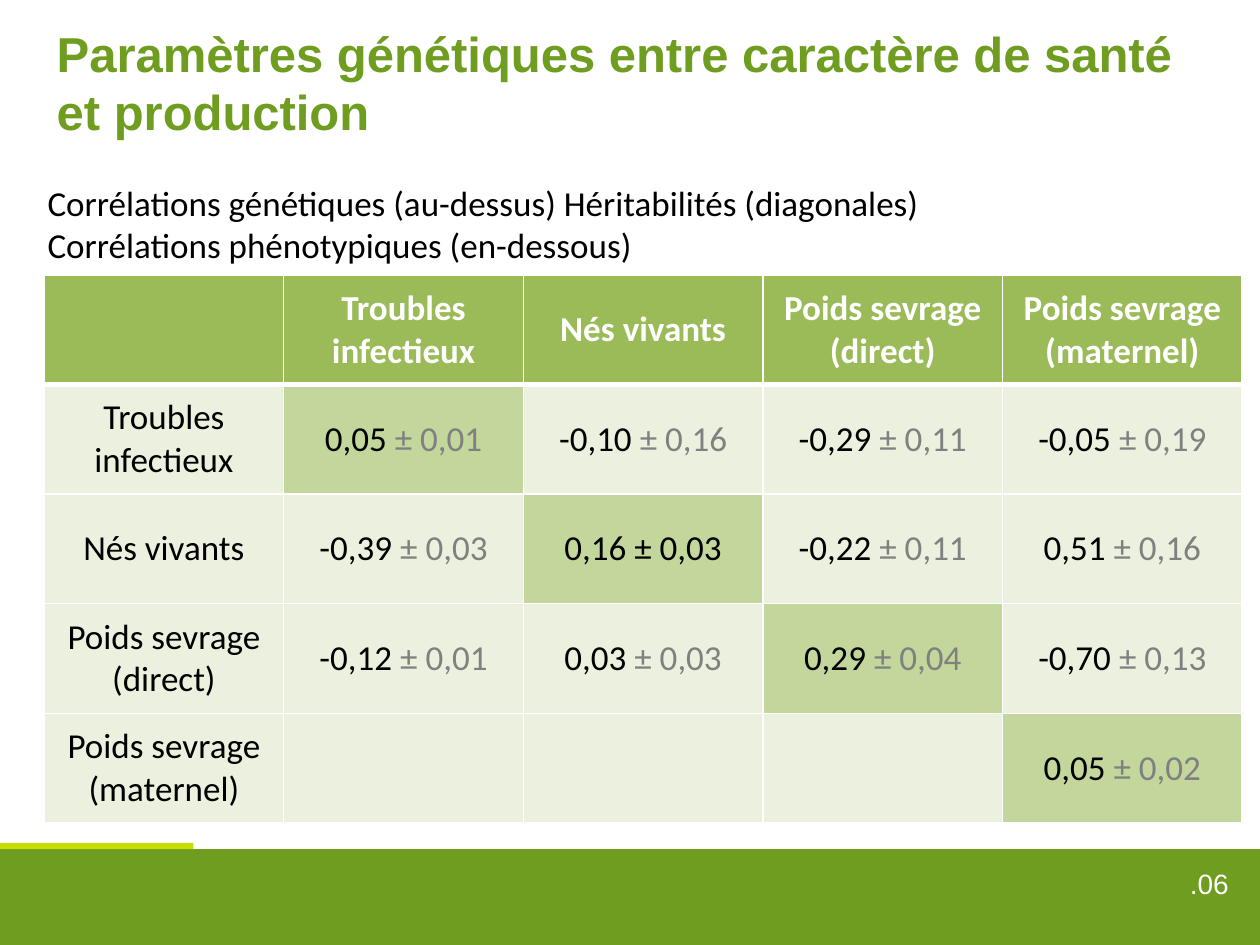
from lxml import etree
from pptx import Presentation
from pptx.dml.color import RGBColor
from pptx.enum import shapes, text
from pptx.oxml import ns
from pptx.util import Cm, Pt

TITLE = "Paramètres génétiques entre caractère de santé et production"
CAPTION = [
    "Corrélations génétiques (au-dessus) Héritabilités (diagonales)",
    "Corrélations phénotypiques (en-dessous)",
]
PAGE_NUMBER = ".06"
TRAITS = [
    "Troubles infectieux",
    "Nés vivants",
    "Poids sevrage (direct)",
    "Poids sevrage (maternel)",
]
# (estimate, standard error); heritabilities lie on the diagonal
ESTIMATES = [
    [("0,05", "0,01"), ("-0,10", "0,16"), ("-0,29", "0,11"), ("-0,05", "0,19")],
    [("-0,39", "0,03"), ("0,16", "0,03"), ("-0,22", "0,11"), ("0,51", "0,16")],
    [("-0,12", "0,01"), ("0,03", "0,03"), ("0,29", "0,04"), ("-0,70", "0,13")],
    [None, None, None, ("0,05", "0,02")],
]
PLAIN_ERROR_CELL = (1, 1)  # its standard error is black like the estimate

THEME = {
    "green": "6F9D20", "lime": "C5DD01", "white": "FFFFFF", "black": "000000",
    "grey": "808080", "header": "9BBB59", "diagonal": "C3D69B", "body": "EBF1DE",
    "heading_font": "Arial", "body_font": "Calibri",
    "title_size": 28, "body_size": 20, "number_size": 16,
}
COLUMN_WIDTH, ROW_HEIGHT = 4.83, 2.21


def color(name):
    return RGBColor.from_string(THEME[name])


def write(frame, paragraphs, font="body_font", size="body_size", bold=False,
          align=text.PP_ALIGN.LEFT, anchor=text.MSO_ANCHOR.TOP):
    """Fill a text frame; each paragraph is a list of (text, colour name) runs."""
    frame.word_wrap = True
    frame.vertical_anchor = anchor
    for index, runs in enumerate(paragraphs):
        paragraph = frame.paragraphs[0] if index == 0 else frame.add_paragraph()
        paragraph.alignment = align
        for content, color_name in runs:
            run = paragraph.add_run()
            run.text = content
            run.font.name = THEME[font]
            run.font.size = Pt(THEME[size])
            run.font.bold = bold
            run.font.color.rgb = color(color_name)


def add_bar(slide, left, top, width, height, fill):
    bar = slide.shapes.add_shape(
        shapes.MSO_SHAPE.RECTANGLE, Cm(left), Cm(top), Cm(width), Cm(height))
    bar.shadow.inherit = False
    bar.fill.solid()
    bar.fill.fore_color.rgb = color(fill)
    bar.line.fill.background()


def set_borders(cell, **widths):
    """Draw white borders; widths in points keyed by side L, R, T, B."""
    properties = cell._tc.get_or_add_tcPr()
    for side, width in widths.items():
        line = etree.SubElement(properties, ns.qn(f"a:ln{side}"), w=str(Pt(width)))
        fill = etree.SubElement(line, ns.qn("a:solidFill"))
        etree.SubElement(fill, ns.qn("a:srgbClr"), val=THEME["white"])


def cell_content(row, column):
    """Return the runs and the fill of one table cell."""
    if row == 0:
        return ([(TRAITS[column - 1], "white")] if column else []), "header"
    if column == 0:
        return [(TRAITS[row - 1], "black")], "body"
    fill = "diagonal" if row == column else "body"
    estimate = ESTIMATES[row - 1][column - 1]
    if estimate is None:
        return [], fill
    value, error = estimate
    error_color = "black" if (row - 1, column - 1) == PLAIN_ERROR_CELL else "grey"
    return [(f"{value} ", "black"), (f"± {error}", error_color)], fill


def add_estimates_table(slide, left, top):
    count = len(TRAITS) + 1
    table = slide.shapes.add_table(
        count, count, Cm(left), Cm(top),
        Cm(count * COLUMN_WIDTH), Cm(count * ROW_HEIGHT)).table
    for index in range(count):
        table.columns[index].width = Cm(COLUMN_WIDTH)
        table.rows[index].height = Cm(ROW_HEIGHT)
        for column in range(count):
            cell = table.cell(index, column)
            runs, fill = cell_content(index, column)
            set_borders(cell, L=1, R=1, T=3 if index == 1 else 1,
                        B=3 if index == 0 else 1)
            cell.fill.solid()
            cell.fill.fore_color.rgb = color(fill)
            write(cell.text_frame, [runs], bold=index == 0,
                  align=text.PP_ALIGN.CENTER)
            cell.vertical_anchor = text.MSO_ANCHOR.MIDDLE


def add_text(slide, left, top, width, height, paragraphs, **options):
    box = slide.shapes.add_textbox(Cm(left), Cm(top), Cm(width), Cm(height))
    write(box.text_frame, paragraphs, **options)


def main():
    presentation = Presentation()
    presentation.slide_width, presentation.slide_height = Cm(25.4), Cm(19.05)
    slide = presentation.slides.add_slide(presentation.slide_layouts[5])

    title = slide.shapes.title
    title.left, title.top, title.width, title.height = (
        Cm(0.89), Cm(0.33), Cm(23.19), Cm(2.64))
    title.fill.solid()
    title.fill.fore_color.rgb = color("white")
    write(title.text_frame, [[(TITLE, "green")]], font="heading_font",
          size="title_size", bold=True, anchor=text.MSO_ANCHOR.MIDDLE)

    add_bar(slide, 0, 17.12, 25.4, 1.93, "green")
    add_bar(slide, 0, 16.99, 3.9, 0.13, "lime")
    add_text(slide, 21.9, 17.35, 3.12, 0.69, [[(PAGE_NUMBER, "white")]],
             font="heading_font", size="number_size", align=text.PP_ALIGN.RIGHT)
    add_estimates_table(slide, 0.89, 5.54)
    add_text(slide, 0.71, 3.53, 19.81, 1.96,
             [[(line, "black")] for line in CAPTION], align=text.PP_ALIGN.JUSTIFY)
    presentation.save("out.pptx")


if __name__ == "__main__":
    main()
